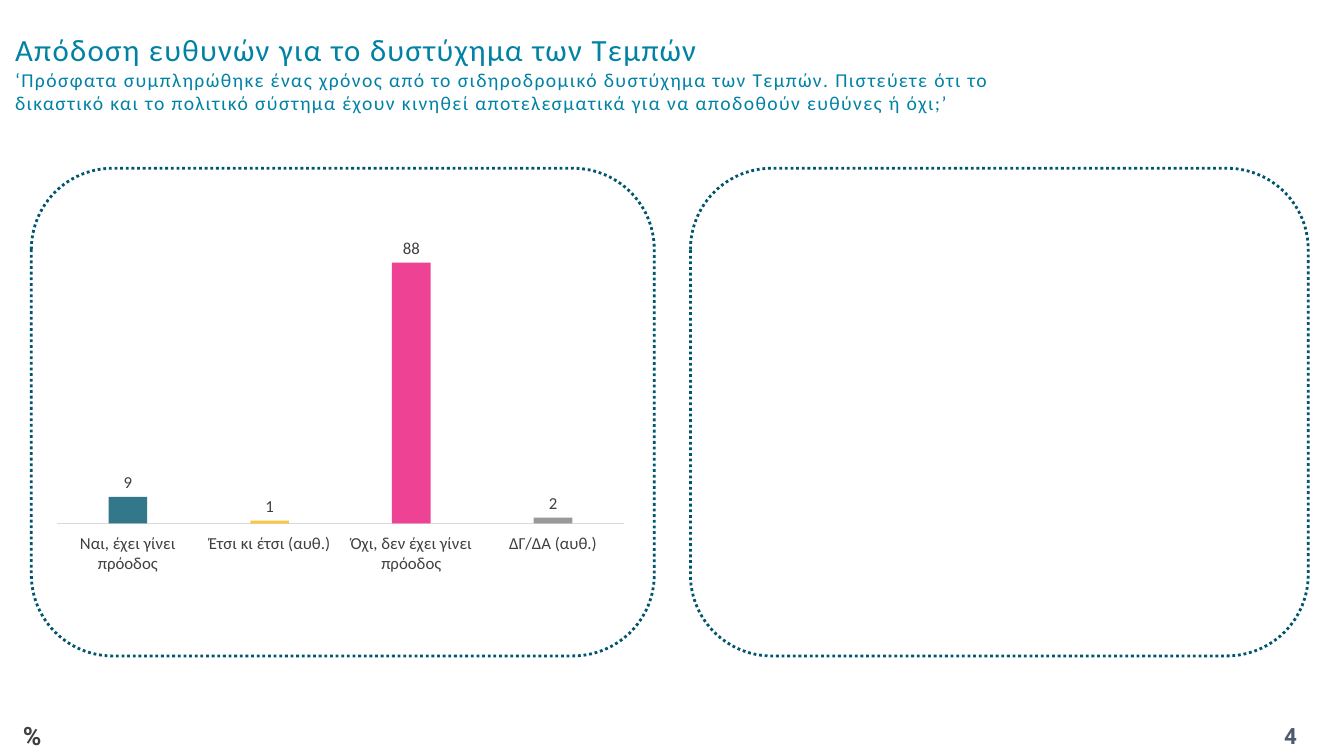
from lxml.etree import SubElement
from pptx import Presentation
from pptx.chart.data import CategoryChartData
from pptx.dml.color import RGBColor
from pptx.enum.chart import XL_CHART_TYPE, XL_LABEL_POSITION, XL_TICK_LABEL_POSITION, XL_TICK_MARK
from pptx.enum.dml import MSO_LINE, MSO_PATTERN
from pptx.enum.shapes import MSO_SHAPE
from pptx.enum.text import MSO_ANCHOR, PP_ALIGN
from pptx.oxml.ns import qn
from pptx.util import Cm, Pt

COLORS = {
    "title": "0082A5", "teal": "00566E", "gold": "FEB80A", "pink": "EA157A",
    "gray": "808080", "dark": "404040", "page": "4E5B6F", "axis": "D9D9D9",
}
ANSWERS = [
    ("Ναι, έχει γίνει πρόοδος", 9, "teal"),
    ("Έτσι κι έτσι (αυθ.)", 1, "gold"),
    ("Όχι, δεν έχει γίνει πρόοδος", 88, "pink"),
    ("ΔΓ/ΔΑ (αυθ.)", 2, "gray"),
]
TITLE = "Απόδοση ευθυνών για το δυστύχημα των Τεμπών"
QUERY = ("‘Πρόσφατα συμπληρώθηκε ένας χρόνος από το σιδηροδρομικό δυστύχημα των Τεμπών. "
         "Πιστεύετε ότι το δικαστικό και το πολιτικό σύστημα έχουν κινηθεί αποτελεσματικά "
         "για να αποδοθούν ευθύνες ή όχι;’")


def color(name):
    return RGBColor.from_string(COLORS[name])


def style(font, size, tint, face="Calibri"):
    font.size = Pt(size)
    font.name = face
    font.color.rgb = color(tint)


def add_run(para, text, size, tint, face="Calibri", bold=False, space=0):
    run = para.add_run()
    run.text = text
    style(run.font, size, tint, face)
    run.font.bold = bold
    if space:
        run.font._element.set("spc", str(space * 100))
    return run


def add_box(slide, left, top, width, height, anchor=MSO_ANCHOR.MIDDLE, align=PP_ALIGN.LEFT):
    box = slide.shapes.add_textbox(Cm(left), Cm(top), Cm(width), Cm(height))
    frame = box.text_frame
    frame.word_wrap = True
    frame.vertical_anchor = anchor
    para = frame.paragraphs[0]
    para.alignment = align
    return para


def add_panel(slide, left, width):
    panel = slide.shapes.add_shape(
        MSO_SHAPE.ROUNDED_RECTANGLE, Cm(left), Cm(4.24), Cm(width), Cm(12.29))
    panel.shadow.inherit = False
    panel.fill.background()
    panel.line.color.rgb = color("teal")
    panel.line.width = Pt(2)
    panel.line.dash_style = MSO_LINE.ROUND_DOT


def add_bars(slide):
    data = CategoryChartData(number_format="0")
    data.categories = [name for name, _, _ in ANSWERS]
    data.add_series("Series 1", [value for _, value, _ in ANSWERS])
    chart = slide.shapes.add_chart(
        XL_CHART_TYPE.COLUMN_CLUSTERED, Cm(1.14), Cm(5.54), Cm(14.88), Cm(9.09), data).chart
    chart.has_legend = False
    chart.has_title = False
    style(chart.font, 12, "dark")

    # Axes
    axis = chart.category_axis
    axis.major_tick_mark = XL_TICK_MARK.NONE
    axis.tick_label_position = XL_TICK_LABEL_POSITION.LOW
    axis.format.line.color.rgb = color("axis")
    axis.format.line.width = Pt(0.75)
    style(axis.tick_labels.font, 12, "dark")
    scale = chart.value_axis
    scale.visible = False
    scale.has_major_gridlines = False
    scale.minimum_scale = 0
    scale.maximum_scale = 100

    # Bars and their values
    plot = chart.plots[0]
    plot.vary_by_categories = False
    plot.gap_width = 267
    plot.overlap = -43
    plot.has_data_labels = True
    labels = plot.data_labels
    labels.show_value = True
    labels.number_format = "0"
    labels.number_format_is_linked = False
    labels.position = XL_LABEL_POSITION.OUTSIDE_END
    style(labels.font, 12, "dark")
    for spot, (_, _, tint) in enumerate(ANSWERS):
        look = plot.series[0].points[spot].format
        look.fill.solid()
        look.fill.fore_color.rgb = color(tint)
        look.line.fill.background()
        shade = look.fill._xPr.find(qn("a:solidFill"))[0]
        SubElement(shade, qn("a:alpha")).set("val", "80000")


def main():
    deck = Presentation()
    deck.slide_width = Cm(33.87)
    deck.slide_height = Cm(19.05)
    slide = deck.slides.add_slide(deck.slide_layouts[6])

    # Title and question
    head = add_box(slide, 0.13, 0.33, 25.2, 3)
    add_run(head, TITLE, 22, "title", space=1)
    head.add_line_break()
    add_run(head, QUERY, 14, "title", space=1)

    # Page number and unit
    page = add_box(slide, 31.19, 18.03, 2.67, 1.02, align=PP_ALIGN.CENTER)
    add_run(page, "4", 16, "page", face="Roboto", bold=True)
    unit = add_box(slide, 0.33, 18.03, 1.8, 1.02, anchor=MSO_ANCHOR.TOP)
    sign = add_run(unit, "%", 18, "dark", face="Roboto", bold=True)
    fill = sign.font.fill
    fill.patterned()
    fill.pattern = MSO_PATTERN.DARK_UPWARD_DIAGONAL
    fill.fore_color.rgb = color("gray")
    fill.back_color.rgb = color("dark")

    # Panels and chart
    add_panel(slide, 17.4, 15.57)
    add_bars(slide)
    add_panel(slide, 0.79, 15.7)

    deck.save("out.pptx")


if __name__ == "__main__":
    main()
